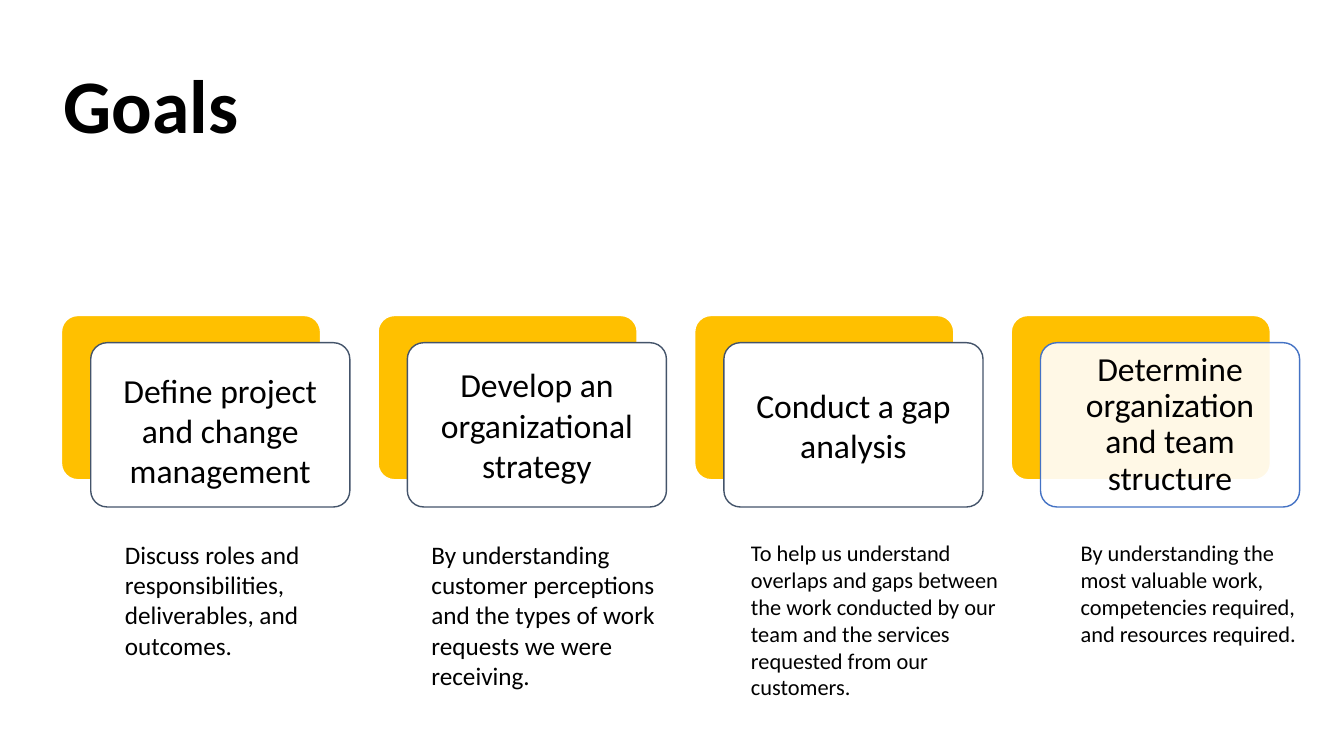
from pptx import Presentation
from pptx.dml.color import RGBColor
from pptx.enum.shapes import MSO_SHAPE
from pptx.enum.text import MSO_ANCHOR, PP_ALIGN
from pptx.oxml import parse_xml
from pptx.oxml.ns import nsdecls
from pptx.util import Inches, Pt

ROUNDED = MSO_SHAPE.ROUNDED_RECTANGLE
TOP, MIDDLE = MSO_ANCHOR.TOP, MSO_ANCHOR.MIDDLE
LEFT, CENTER = PP_ALIGN.LEFT, PP_ALIGN.CENTER
FONT = "Calibri"
BLACK, WHITE, GOLD, SLATE, BLUE = "000000", "FFFFFF", "FFC000", "44546A", "4472C4"

# Column grid, in inches
COL_LEFT, COL_TOP, COL_STEP = 0.61, 3.13, 3.14
CARD_W, CARD_H = 2.57, 1.63
CARD_DX, CARD_DY = 0.29, 0.27
NOTE_TOP = 5.3

GOALS = [
    dict(goal="Define project and change management",
         note="Discuss roles and responsibilities, deliverables, and outcomes.",
         note_dx=0.53, note_w=2.58, note_h=1.31, note_size=18, side=0.25, top=0.25),
    dict(goal="Develop an organizational strategy",
         note="By understanding customer perceptions and the types of work "
              "requests we were receiving.",
         note_dx=0.43, note_w=2.69, note_h=1.62, note_size=18),
    dict(goal="Conduct a gap analysis",
         note="To help us understand overlaps and gaps between the work conducted "
              "by our team and the services requested from our customers.",
         note_dx=0.46, note_w=2.69, note_h=1.72, note_size=16, side=0.25),
    dict(goal="Determine organization and team structure",
         note="By understanding the most valuable work, competencies required, "
              "and resources required.",
         note_dx=0.59, note_w=2.49, note_h=1.18, note_size=16,
         line=BLUE, opacity=90, spacing=0.9),
]


def rgb(color):
    return RGBColor.from_string(color)


def put_text(shape, text, size=18, color=BLACK, bold=False, align=LEFT,
             anchor=TOP, spacing=1.0, after=0, insets=(0.1, 0.05, 0.1, 0.05)):
    tf = shape.text_frame
    tf.word_wrap = True
    tf.vertical_anchor = anchor
    tf.margin_left, tf.margin_top, tf.margin_right, tf.margin_bottom = map(Inches, insets)
    p = tf.paragraphs[0]
    p.alignment, p.line_spacing, p.space_after = align, spacing, Pt(after)
    r = p.add_run()
    r.text = text
    r.font.name, r.font.size, r.font.bold = FONT, Pt(size), bold
    r.font.color.rgb = rgb(color)


def add_card(s, left, top, fill, line, opacity=100):
    sp = s.shapes.add_shape(ROUNDED, Inches(left), Inches(top),
                            Inches(CARD_W), Inches(CARD_H))
    sp.adjustments[0] = 0.1
    sp.shadow.inherit = False
    sp.fill.solid()
    sp.fill.fore_color.rgb = rgb(fill)
    sp.line.color.rgb = rgb(line)
    sp.line.width = Pt(1)
    if opacity < 100:
        clr = sp.fill._xPr.find(".//{*}srgbClr")
        clr.append(parse_xml(f'<a:alpha {nsdecls("a")} val="{opacity * 1000}"/>'))
    return sp


def add_title(s, left, top, width, height):
    title = s.shapes.title
    title.left, title.top = Inches(left), Inches(top)
    title.width, title.height = Inches(width), Inches(height)
    put_text(title, "Goals", size=54, bold=True, spacing=0.9, after=12)


def add_goal(s, left, top, goal, note, note_dx, note_w, note_h, note_size,
             side=0.15, top_inset=0.15, line=SLATE, opacity=100, spacing=1.0):
    # Gold backing and the card in front of it
    add_card(s, left, top, GOLD, WHITE)
    card = add_card(s, left + CARD_DX, top + CARD_DY, WHITE, line, opacity)
    put_text(card, goal, size=24, align=CENTER, anchor=MIDDLE, spacing=spacing,
             insets=(side, top_inset, side, 0.15))
    # Explanation below the card
    box = s.shapes.add_textbox(Inches(left + note_dx), Inches(NOTE_TOP),
                               Inches(note_w), Inches(note_h))
    put_text(box, note, size=note_size)


def main():
    prs = Presentation()
    prs.slide_width, prs.slide_height = Inches(13.33), Inches(7.5)
    s = prs.slides.add_slide(prs.slide_layouts[5])
    add_title(s, 0.53, 0.63, 7.41, 1.33)
    for i, item in enumerate(GOALS):
        top_inset = item.pop("top", 0.15)
        add_goal(s, COL_LEFT + i * COL_STEP, COL_TOP, top_inset=top_inset, **item)
    prs.save("out.pptx")


if __name__ == "__main__":
    main()
